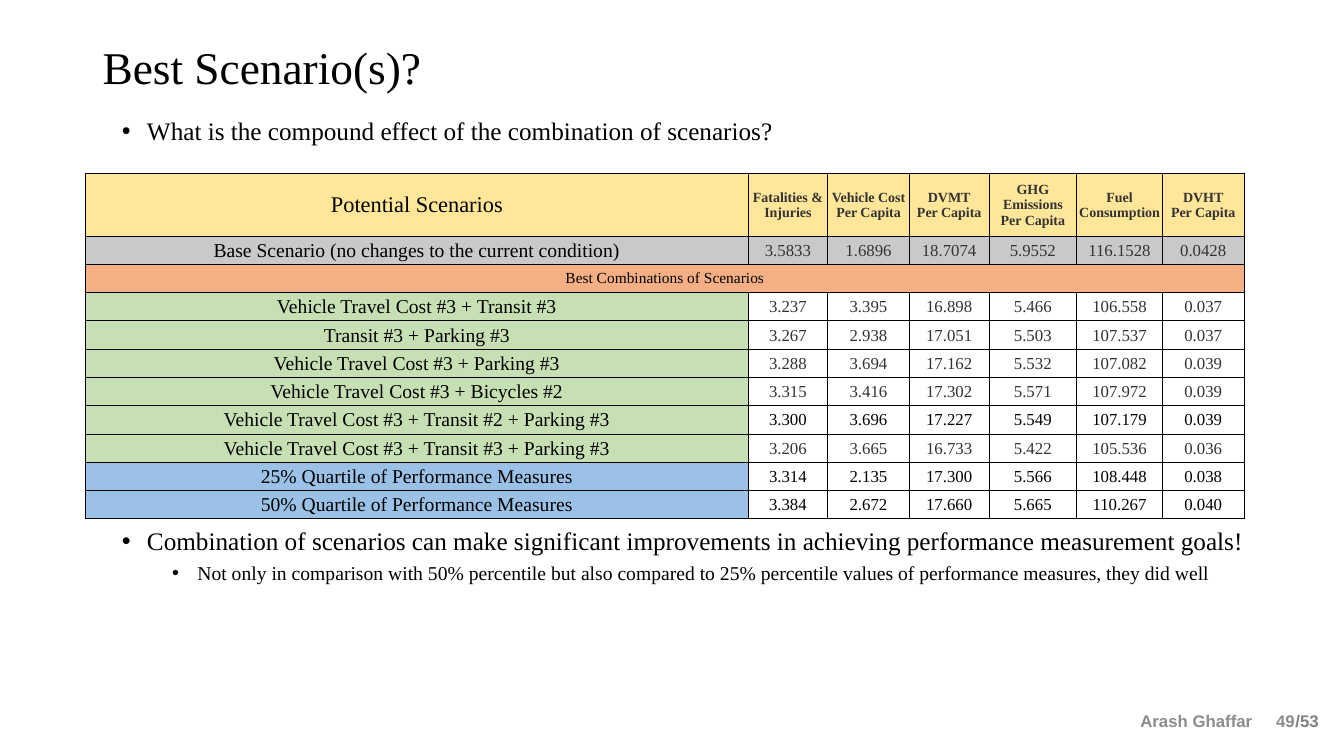
import pptx
import pptx.dml.color
import pptx.enum.text
import pptx.oxml
import pptx.oxml.ns
import pptx.util
from pptx.util import Inches

COLORS = {
    "black": "000000", "dark": "333333", "footer": "8C8C8C", "total": "808080",
    "header": "FFE699", "base": "C9C9C9", "section": "F4B084",
    "scenario": "C6E0B4", "quartile": "9BC2E6",
}
SERIF = "Times New Roman"
SANS = "Arial"
ALIGN = pptx.enum.text.PP_ALIGN
ANCHOR = pptx.enum.text.MSO_ANCHOR

COLUMN_WIDTHS = [6.57, 0.79, 0.81, 0.79, 0.87, 0.85, 0.81]
TABLE_HEIGHT = 3.43
HEADER_HEIGHT = 0.62
HEADINGS = [
    "Potential Scenarios", "Fatalities & Injuries", "Vehicle Cost Per Capita",
    "DVMT\nPer Capita", "GHG\nEmissions\nPer Capita", "Fuel\nConsumption", "DVHT\nPer Capita",
]
ROWS = [
    ("base", "dark", "Base Scenario (no changes to the current condition)",
     "3.5833 1.6896 18.7074 5.9552 116.1528 0.0428"),
    ("section", "black", "Best Combinations of Scenarios", ""),
    ("scenario", "dark", "Vehicle Travel Cost #3 + Transit #3",
     "3.237 3.395 16.898 5.466 106.558 0.037"),
    ("scenario", "dark", "Transit #3 + Parking #3",
     "3.267 2.938 17.051 5.503 107.537 0.037"),
    ("scenario", "dark", "Vehicle Travel Cost #3 + Parking #3",
     "3.288 3.694 17.162 5.532 107.082 0.039"),
    ("scenario", "dark", "Vehicle Travel Cost #3 + Bicycles #2",
     "3.315 3.416 17.302 5.571 107.972 0.039"),
    ("scenario", "black", "Vehicle Travel Cost #3 + Transit #2 + Parking #3",
     "3.300 3.696 17.227 5.549 107.179 0.039"),
    ("scenario", "dark", "Vehicle Travel Cost #3 + Transit #3 + Parking #3",
     "3.206 3.665 16.733 5.422 105.536 0.036"),
    ("quartile", "black", "25% Quartile of Performance Measures",
     "3.314 2.135 17.300 5.566 108.448 0.038"),
    ("quartile", "black", "50% Quartile of Performance Measures",
     "3.384 2.672 17.660 5.665 110.267 0.040"),
]


def rgb(name):
    """Return the named colour."""
    return pptx.dml.color.RGBColor.from_string(COLORS[name])


def style_text(para, size, color, font=SERIF, bold=False):
    """Format every run of a paragraph."""
    for span in para.runs:
        span.font.name = font
        span.font.size = pptx.util.Pt(size)
        span.font.bold = bold
        span.font.color.rgb = rgb(color)


def add_label(page, bounds, text, size, color="black", font=SERIF, bold=False,
              align=ALIGN.LEFT, anchor=ANCHOR.MIDDLE, wrap=True):
    """Add a one-paragraph text box and return its paragraph."""
    box = page.shapes.add_textbox(*(Inches(length) for length in bounds))
    frame = box.text_frame
    frame.word_wrap = wrap
    frame.vertical_anchor = anchor
    frame.text = text
    para = frame.paragraphs[0]
    para.alignment = align
    style_text(para, size, color, font, bold)
    return para


def add_bullets(page, bounds, items):
    """Add a bulleted text box from (level, size, text) items."""
    box = page.shapes.add_textbox(*(Inches(length) for length in bounds))
    frame = box.text_frame
    frame.word_wrap = True
    frame.text = "\n".join(text for level, size, text in items)
    for para, (level, size, text) in zip(frame.paragraphs, items):
        para.level = level
        para.line_spacing = 0.9
        para.space_before = pptx.util.Pt(5)
        style_text(para, size, "black")
        properties = para._p.get_or_add_pPr()
        properties.set("marL", str(Inches(0.25 + 0.5 * level)))
        properties.set("indent", str(Inches(-0.25)))
        namespace = pptx.oxml.ns.nsdecls("a")
        properties.append(pptx.oxml.parse_xml(f'<a:buFont {namespace} typeface="Arial"/>'))
        properties.append(pptx.oxml.parse_xml(f'<a:buChar {namespace} char="•"/>'))


def add_borders(cell):
    """Draw thin black lines on all sides of a cell."""
    properties = cell._tc.get_or_add_tcPr()
    for index, side in enumerate(("lnL", "lnR", "lnT", "lnB")):
        properties.insert(index, pptx.oxml.parse_xml(
            f'<a:{side} {pptx.oxml.ns.nsdecls("a")} w="{pptx.util.Pt(0.5)}"><a:solidFill>'
            f'<a:srgbClr val="{COLORS["black"]}"/></a:solidFill></a:{side}>'))


def fill_cell(cell, text, size, color, fill=None, bold=False):
    """Write and format one table cell."""
    cell.margin_left = cell.margin_right = cell.margin_top = Inches(0.01)
    cell.margin_bottom = 0
    cell.vertical_anchor = ANCHOR.MIDDLE
    if fill:
        cell.fill.solid()
        cell.fill.fore_color.rgb = rgb(fill)
    else:
        cell.fill.background()
    cell.text_frame.text = text
    for para in cell.text_frame.paragraphs:
        para.alignment = ALIGN.CENTER
        style_text(para, size, color, bold=bold)
    add_borders(cell)


def add_scenario_table(page):
    """Add the table of scenarios and performance measures."""
    table = page.shapes.add_table(
        len(ROWS) + 1, len(COLUMN_WIDTHS), Inches(0.85), Inches(1.72),
        Inches(sum(COLUMN_WIDTHS)), Inches(TABLE_HEIGHT)).table
    for column, width in zip(table.columns, COLUMN_WIDTHS):
        column.width = Inches(width)
    for row in table.rows:
        row.height = Inches((TABLE_HEIGHT - HEADER_HEIGHT) / len(ROWS))
    table.rows[0].height = Inches(HEADER_HEIGHT)
    for index, heading in enumerate(HEADINGS):
        size, color = (10, "dark") if index else (16, "black")
        fill_cell(table.cell(0, index), heading, size, color, "header", bold=index > 0)
    for number, (kind, color, name, values) in enumerate(ROWS, 1):
        is_section = kind == "section"
        fill_cell(table.cell(number, 0), name, 11 if is_section else 14, "black", kind)
        if is_section:
            for index in range(1, len(COLUMN_WIDTHS)):
                add_borders(table.cell(number, index))
            table.cell(number, 0).merge(table.cell(number, len(COLUMN_WIDTHS) - 1))
        for index, value in enumerate(values.split(), 1):
            fill_cell(table.cell(number, index), value, 12, color,
                      kind if kind == "base" else None)


def add_footer(page):
    """Add the author and the page count."""
    add_label(page, (9.52, 6.95, 3, 0.4), "Arash Ghaffar", 12, "footer", SANS, True, ALIGN.RIGHT)
    add_label(page, (12.44, 6.95, 0.5, 0.4), "49", 12, "footer", SANS, True, ALIGN.RIGHT)
    add_label(page, (12.75, 7, 0.44, 0.3), "/53", 12, "total", SANS, True,
              anchor=ANCHOR.TOP, wrap=False)


def main():
    """Build and save the slide."""
    deck = pptx.Presentation()
    deck.slide_width = Inches(13.33)
    deck.slide_height = Inches(7.5)
    page = deck.slides.add_slide(deck.slide_layouts[6])
    title = add_label(page, (0.92, 0.4, 11.5, 0.58), "Best Scenario(s)?", 32.4)
    title.line_spacing = 0.9
    add_bullets(page, (0.61, 1.13, 11.97, 0.4), [
        (1, 18, "What is the compound effect of the combination of scenarios?")])
    add_scenario_table(page)
    add_bullets(page, (0.61, 5.2, 11.97, 0.8), [
        (1, 18, "Combination of scenarios can make significant improvements in achieving "
                "performance measurement goals!"),
        (2, 14, "Not only in comparison with 50% percentile but also compared to 25% percentile "
                "values of performance measures, they did well")])
    add_footer(page)
    deck.save("out.pptx")


if __name__ == "__main__":
    main()
